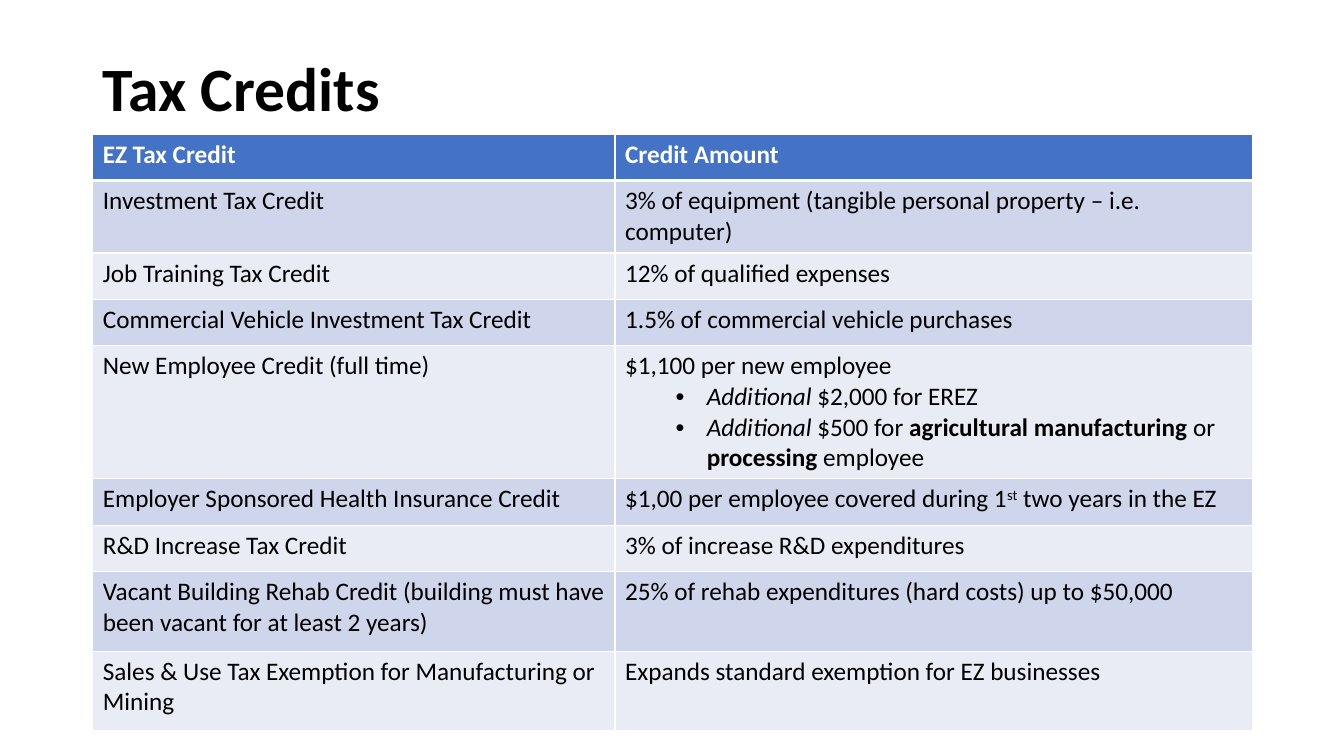
from dataclasses import dataclass

from lxml import etree
from pptx import Presentation
from pptx.dml.color import RGBColor
from pptx.enum.text import MSO_ANCHOR, MSO_AUTO_SIZE, PP_ALIGN
from pptx.oxml.ns import qn
from pptx.util import Inches, Pt

LEFT = PP_ALIGN.LEFT
MIDDLE = MSO_ANCHOR.MIDDLE
NO_FIT = MSO_AUTO_SIZE.NONE
TITLE_ONLY = 5


@dataclass(frozen=True)
class Theme:
    font: str = "Calibri"
    title: int = 44
    body: int = 18
    ink: str = "000000"
    paper: str = "FFFFFF"
    head: str = "4472C4"
    bands: tuple = ("CFD5EA", "E9EBF5")
    thin: int = 1
    thick: int = 3


# A cell is a list of paragraphs, a paragraph a list of (text, style) runs.
# Styles: "b" bold, "i" italic, "s" superscript. Paragraphs after the first are bullets.
BONUS = [
    [("$1,100 per new employee", "")],
    [("Additional", "i"), (" $2,000 for EREZ", "")],
    [("Additional", "i"), (" $500 for ", ""), ("agricultural manufacturing ", "b"),
     ("or ", ""), ("processing", "b"), (" employee", "")],
]
HEALTH = [[("$1,00 per employee covered during 1", ""), ("st", "s"),
           (" two years in the EZ", "")]]
CREDITS = [
    ("EZ Tax Credit", "Credit Amount", 0.46),
    ("Investment Tax Credit",
     "3% of equipment (tangible personal property – i.e. computer)", 0.72),
    ("Job Training Tax Credit", "12% of qualified expenses", 0.46),
    ("Commercial Vehicle Investment Tax Credit",
     "1.5% of commercial vehicle purchases", 0.46),
    ("New Employee Credit (full time)", BONUS, 1.32),
    ("Employer Sponsored Health Insurance Credit", HEALTH, 0.46),
    ("R&D Increase Tax Credit", "3% of increase R&D expenditures", 0.46),
    ("Vacant Building Rehab Credit (building must have been vacant for at least 2 years)",
     "25% of rehab expenditures (hard costs) up to $50,000", 0.79),
    ("Sales & Use Tax Exemption for Manufacturing or Mining",
     "Expands standard exemption for EZ businesses", 0.79),
]


class Deck:
    def __init__(self, theme):
        self.theme = theme
        self.prs = Presentation()
        self.prs.slide_width = Inches(13.33)
        self.prs.slide_height = Inches(7.5)
        self.slide = self.prs.slides.add_slide(self.prs.slide_layouts[TITLE_ONLY])

    def run(self, para, text, size, color, style=""):
        run = para.add_run()
        run.text = text
        font = run.font
        font.name = self.theme.font
        font.size = Pt(size)
        font.color.rgb = RGBColor.from_string(color)
        font.bold = "b" in style
        font.italic = "i" in style
        if "s" in style:
            run._r.get_or_add_rPr().set("baseline", "30000")

    def title(self, text, left, top, width, height):
        shape = self.slide.shapes.title
        shape.left, shape.top = Inches(left), Inches(top)
        shape.width, shape.height = Inches(width), Inches(height)
        frame = shape.text_frame
        frame.auto_size = NO_FIT
        frame.vertical_anchor = MIDDLE
        para = frame.paragraphs[0]
        para.alignment = LEFT
        para.line_spacing = 0.9
        self.run(para, text, self.theme.title, self.theme.ink, "b")

    def bullet(self, para):
        para.level = 1
        props = para._p.get_or_add_pPr()
        props.set("marL", str(Inches(0.81)))
        props.set("indent", str(Inches(-0.31)))
        etree.SubElement(props, qn("a:buFont")).set("typeface", "Arial")
        etree.SubElement(props, qn("a:buChar")).set("char", "•")

    def edges(self, cell, top, bottom):
        """Draw the four cell borders; top and bottom are widths in points."""
        props = cell._tc.get_or_add_tcPr()
        thin = self.theme.thin
        for side, width in zip("LRTB", (thin, thin, top, bottom)):
            line = etree.SubElement(props, qn("a:ln" + side), w=str(Pt(width)))
            fill = etree.SubElement(line, qn("a:solidFill"))
            etree.SubElement(fill, qn("a:srgbClr")).set("val", self.theme.paper)

    def cell(self, cell, content, row):
        theme = self.theme
        head = row == 0
        self.edges(cell, theme.thick if row == 1 else theme.thin,
                   theme.thick if head else theme.thin)
        cell.fill.solid()
        cell.fill.fore_color.rgb = RGBColor.from_string(
            theme.head if head else theme.bands[(row - 1) % 2])
        if isinstance(content, str):
            content = [[(content, "b" if head else "")]]
        frame = cell.text_frame
        for index, runs in enumerate(content):
            para = frame.add_paragraph() if index else frame.paragraphs[0]
            if index:
                self.bullet(para)
            for text, style in runs:
                self.run(para, text, theme.body, theme.paper if head else theme.ink, style)

    def table(self, rows, left, top, widths):
        """Each row holds its cell contents followed by its height."""
        high = sum(row[-1] for row in rows)
        table = self.slide.shapes.add_table(
            len(rows), len(widths), Inches(left), Inches(top),
            Inches(sum(widths)), Inches(high)).table
        for col, width in zip(table.columns, widths):
            col.width = Inches(width)
        for index, (*cells, height) in enumerate(rows):
            table.rows[index].height = Inches(height)
            for col, content in enumerate(cells):
                self.cell(table.cell(index, col), content, index)


def main():
    deck = Deck(Theme())
    deck.title("Tax Credits", 0.92, 0.18, 11.5, 1.45)
    deck.table(CREDITS, 0.92, 1.33, (5.18, 6.32))
    deck.prs.save("out.pptx")


if __name__ == "__main__":
    main()
